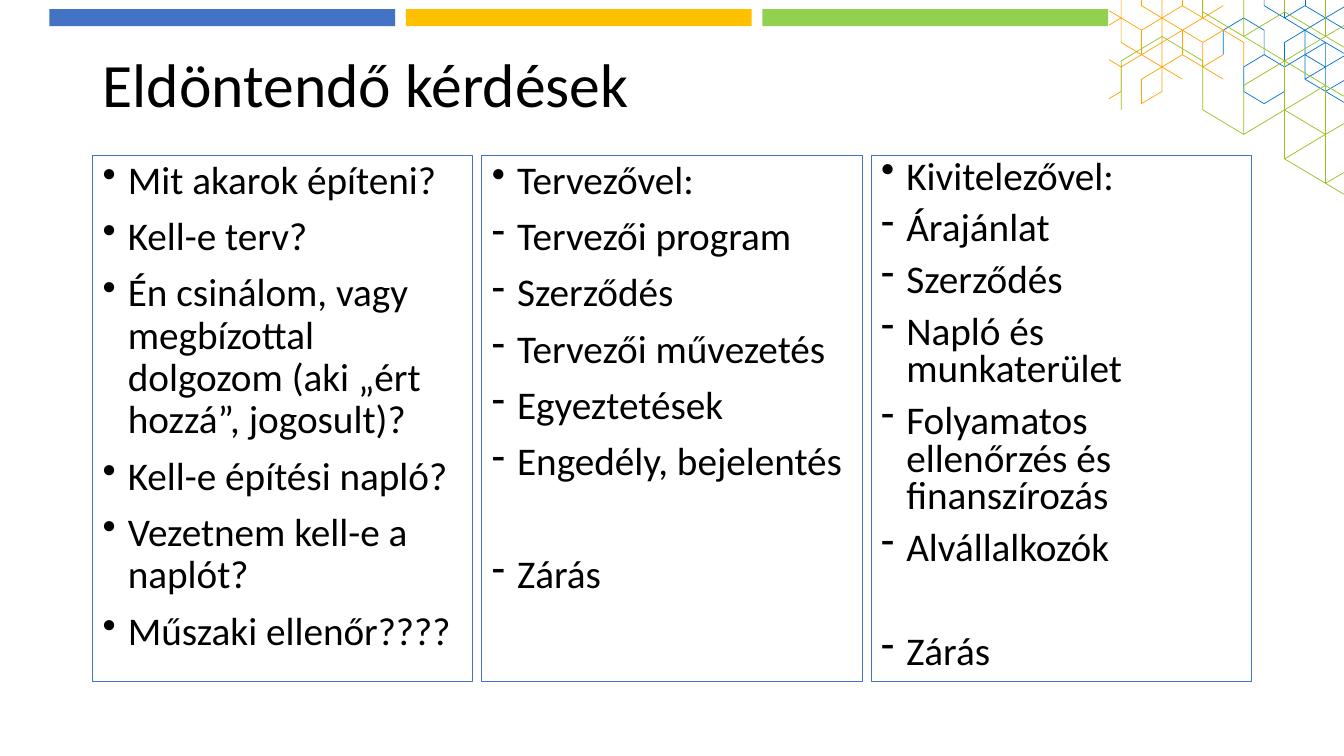
from lxml.etree import SubElement
from pptx import Presentation
from pptx.dml.color import RGBColor
from pptx.enum.shapes import MSO_SHAPE
from pptx.enum.text import MSO_ANCHOR, MSO_AUTO_SIZE, PP_ALIGN
from pptx.oxml.ns import qn
from pptx.util import Inches, Pt

BLACK = RGBColor(0x00, 0x00, 0x00)
BLUE = RGBColor(0x44, 0x72, 0xC4)
AMBER = RGBColor(0xFF, 0xC0, 0x00)
GREEN = RGBColor(0x92, 0xD0, 0x50)
LATTICE_BLUE = RGBColor(0x00, 0x72, 0xCE)
LATTICE_ORANGE = RGBColor(0xFF, 0xA3, 0x00)
LATTICE_GREEN = RGBColor(0x96, 0xC1, 0x1E)

# Lattice strokes as (column, row); TOP, LEFT and RIGHT are where strokes are cut off.
TOP, LEFT, RIGHT = -0.47, -0.59, 10.91
ORANGE_STROKES = [
    [(LEFT, 0.41), (0, 1), (1, 2), (3, 0), (4, 1), (5, 0)],
    [(LEFT, 1.59), (0, 1)],
    [(1, TOP), (1, 0), (4, 3), (5, 2)],
    [(0, TOP), (0, 3), (2, 5), (1, 6), (1, 8), (2, 7), (2, TOP)],
    [(1, 2), (1, 4), (4, 1), (6, 3), (6, 5)],
    [(LEFT, 4.41), (0, 5), (1, 4)],
    [(0, 5), (0, 7), (LEFT, 7.59)],
    [(3, TOP), (3, 0)],
    [(4, TOP), (4, 1)],
    [(3, 2), (3, 4), (5, 6)],
    [(4, 3), (4, 5), (5, 4)],
    [(3, 6), (2, 5), (3, 4)],
]
BLUE_STROKES = [
    [(7, TOP), (7, 0), (10, 3), (RIGHT, 3.89)],
    [(8, TOP), (8, 1), (9, 0), (RIGHT, 1.89)],
    [(9, TOP), (9, 0)],
    [(10, TOP), (10, 1)],
    [(RIGHT, 0.11), (10, 1), (8, 3), (8, 5), (10, 3), (10, 7), (RIGHT, 6.11)],
    [(9, 2), (9, 6), (RIGHT, 7.89)],
    [(RIGHT, 4.11), (10, 5), (9, 6)],
    [(9, 4), (10, 5)],
    [(5, 4), (5, 2), (6, 1), (7, 2), (7, 4), (8, 5)],
    [(7, 4), (6, 5), (6, 7), (7, 8), (8, 7)],
]
WIDE_TOP, WIDE_RIGHT = -0.49, 5.45
GREEN_STROKES = [
    [(0, 4), (0, 2), (1, 1), (2, 2)],
    [(2, WIDE_TOP), (2, 0), (5, 3), (WIDE_RIGHT, 3.44)],
    [(3, WIDE_TOP), (3, 1), (4, 0), (WIDE_RIGHT, 1.44)],
    [(4, WIDE_TOP), (4, 0)],
    [(5, WIDE_TOP), (5, 1)],
    [(WIDE_RIGHT, 0.56), (5, 1), (3, 3), (3, 5), (5, 3), (5, 7), (WIDE_RIGHT, 6.56)],
    [(2, 2), (2, 4), (3, 5)],
    [(4, 2), (4, 6), (WIDE_RIGHT, 7.44)],
    [(4, 4), (5, 5), (WIDE_RIGHT, 4.56)],
    [(4, 6), (5, 5)],
]

# Per column: line spacing, space before the closing item, items as (bullet, text).
QUESTIONS = (0.9, 10, [
    ("•", "Mit akarok építeni?"),
    ("•", "Kell-e terv?"),
    ("•", "Én csinálom, vagy megbízottal dolgozom (aki „ért hozzá”, jogosult)?"),
    ("•", "Kell-e építési napló?"),
    ("•", "Vezetnem kell-e a naplót?"),
    ("•", "Műszaki ellenőr????"),
])
DESIGNER = (0.9, 50, [
    ("•", "Tervezővel:"),
    ("-", "Tervezői program"),
    ("-", "Szerződés"),
    ("-", "Tervezői művezetés"),
    ("-", "Egyeztetések"),
    ("-", "Engedély, bejelentés"),
    ("-", "Zárás"),
])
CONTRACTOR = (0.8, 47, [
    ("•", "Kivitelezővel:"),
    ("-", "Árajánlat"),
    ("-", "Szerződés"),
    ("-", "Napló és munkaterület"),
    ("-", "Folyamatos ellenőrzés és finanszírozás"),
    ("-", "Alvállalkozók"),
    ("-", "Zárás"),
])


class SlidePainter:
    """Draws on one slide; all lengths are percentages of the slide's size."""

    font_name = "Calibri"

    def __init__(self, deck):
        self.deck = deck
        self.page = deck.slides.add_slide(deck.slide_layouts[5])

    def point(self, across, down):
        """Turn percentages into slide units, kept within the slide."""
        across, down = (min(max(share, 0), 100) for share in (across, down))
        return (round(self.deck.slide_width * across / 100),
                round(self.deck.slide_height * down / 100))

    def style(self, para, size, spacing):
        para.line_spacing = spacing
        para.alignment = PP_ALIGN.LEFT
        para.font.name = self.font_name
        para.font.size = Pt(size)
        para.font.color.rgb = BLACK

    def title(self, text, left, top, width, height):
        box = self.page.shapes.title
        box.left, box.top = self.point(left, top)
        box.width, box.height = self.point(width, height)
        frame = box.text_frame
        frame.text = text
        frame.auto_size = MSO_AUTO_SIZE.NONE
        frame.vertical_anchor = MSO_ANCHOR.MIDDLE
        self.style(frame.paragraphs[0], 44, 0.9)

    def bar(self, color, left, top, width, height):
        box = self.page.shapes.add_shape(
            MSO_SHAPE.RECTANGLE, *self.point(left, top), *self.point(width, height))
        box.shadow.inherit = False
        box.fill.solid()
        box.fill.fore_color.rgb = color
        box.line.fill.background()

    def lattice(self, color, strokes, origin, step):
        """Draw all strokes of one colour as a single open outline."""
        paths = [[self.point(origin[0] + column * step[0], origin[1] + row * step[1])
                  for column, row in stroke] for stroke in strokes]
        builder = self.page.shapes.build_freeform(*paths[0][0])
        for path in paths:
            builder.move_to(*path[0])
            builder.add_line_segments(path[1:], close=False)
        outline = builder.convert_to_shape()
        outline.shadow.inherit = False
        outline.fill.background()
        outline.line.color.rgb = color
        outline.line.width = Pt(0.5)

    def bullet_column(self, content, left, top, width, height):
        spacing, closing_gap, items = content
        box = self.page.shapes.add_textbox(
            *self.point(left, top), *self.point(width, height))
        box.line.color.rgb = BLUE
        box.line.width = Pt(0.75)
        frame = box.text_frame
        frame.word_wrap = True
        for index, (bullet, text) in enumerate(items):
            para = frame.add_paragraph() if index else frame.paragraphs[0]
            para.text = text
            properties = para._p.get_or_add_pPr()
            properties.set("marL", str(Inches(0.25)))
            properties.set("indent", str(Inches(-0.25)))
            SubElement(properties, qn("a:buChar")).set("char", bullet)
            if index:
                para.space_before = Pt(closing_gap if index == len(items) - 1 else 10)
            self.style(para, 28, spacing)


def main():
    deck = Presentation()
    deck.slide_width, deck.slide_height = Inches(13.33), Inches(7.5)
    painter = SlidePainter(deck)

    for index, color in enumerate((BLUE, AMBER, GREEN)):
        painter.bar(color, 3.68 + 26.52 * index, 1.2, 25.73, 2.27)

    painter.lattice(LATTICE_BLUE, BLUE_STROKES, (83.42, 0.76), (1.52, 1.62))
    painter.lattice(LATTICE_ORANGE, ORANGE_STROKES, (83.42, 0.76), (1.52, 1.62))
    painter.lattice(LATTICE_GREEN, GREEN_STROKES, (83.42, 1.58), (3.04, 3.24))

    painter.title("Eldöntendő kérdések", 6.9, 5.33, 86.27, 12.53)
    for index, content in enumerate((QUESTIONS, DESIGNER, CONTRACTOR)):
        painter.bullet_column(content, 6.9 + 28.96 * index, 20.53, 28.28, 69.6)

    deck.save("out.pptx")


if __name__ == "__main__":
    main()
